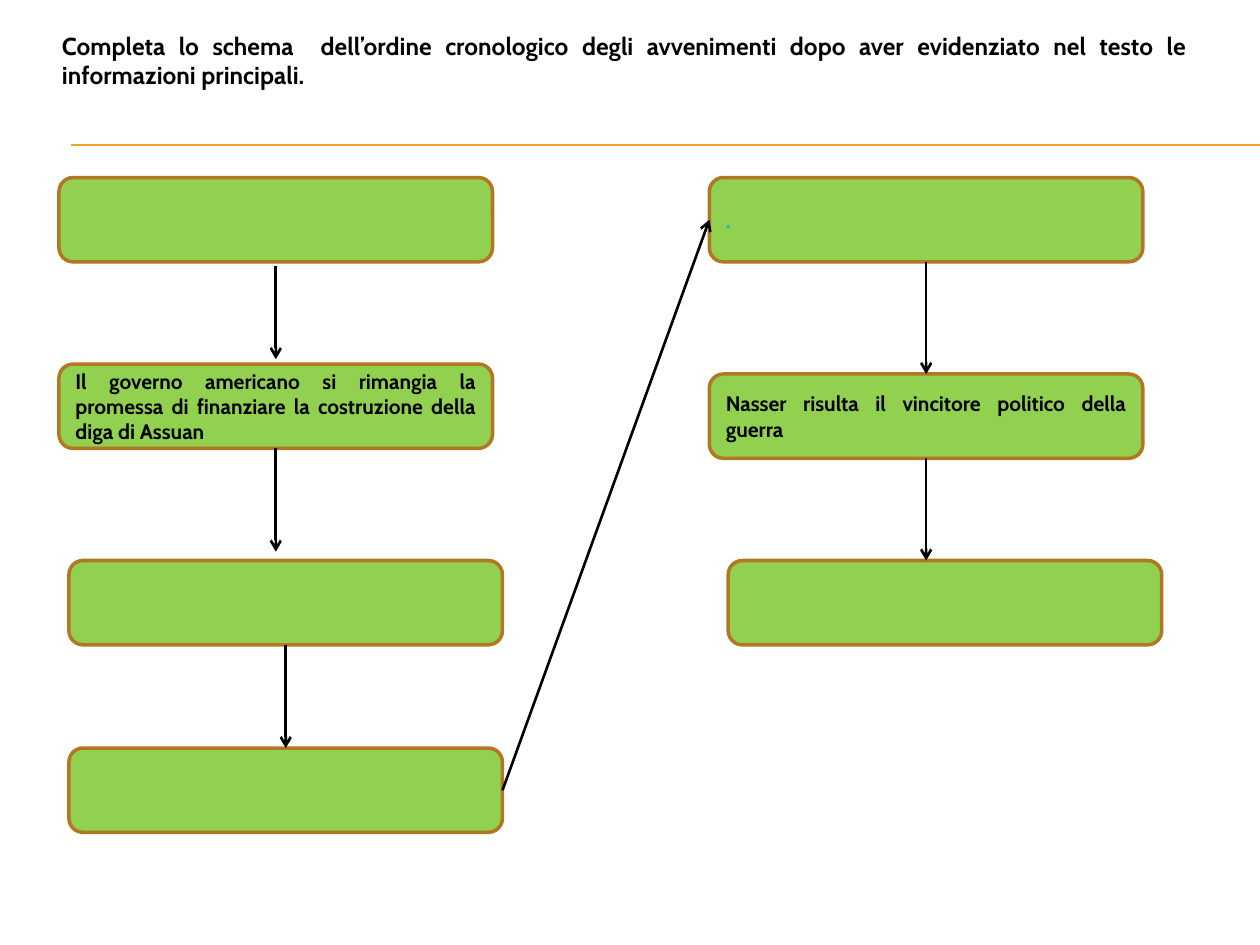
from dataclasses import dataclass
from itertools import pairwise

from lxml import etree
from pptx import Presentation
from pptx.dml.color import RGBColor
from pptx.enum.shapes import MSO_CONNECTOR, MSO_SHAPE
from pptx.enum.text import MSO_ANCHOR, PP_ALIGN
from pptx.oxml.ns import qn
from pptx.util import Cm, Pt

STRAIGHT = MSO_CONNECTOR.STRAIGHT
ROUNDED = MSO_SHAPE.ROUNDED_RECTANGLE
JUSTIFY = PP_ALIGN.JUSTIFY
MIDDLE, TOP = MSO_ANCHOR.MIDDLE, MSO_ANCHOR.TOP


@dataclass(frozen=True)
class Theme:
    font: str = "Cabin"
    title_size: float = 14
    body_size: float = 12
    ink: str = "000000"
    accent: str = "00B0F0"
    fill: str = "92D050"
    border: str = "B17722"
    rule: str = "F0A22E"


@dataclass(frozen=True)
class Step:
    left: float  # offset from the column's left edge, cm
    top: float   # offset from the column's top edge, cm
    text: str = ""
    color: str = Theme.ink
    gap_before: float = 0  # space between the arrowhead and this box
    gap_after: float = 0   # space between this box and the next arrow


THEME = Theme()
BOX_W, BOX_H = 8.74, 1.7


def write(sp, text, size, color, anchor):
    tf = sp.text_frame
    tf.word_wrap = True
    tf.vertical_anchor = anchor
    tf.text = text
    p = tf.paragraphs[0]
    p.alignment = JUSTIFY
    font = p.runs[0].font
    font.name, font.size, font.bold = THEME.font, Pt(size), True
    font.color.rgb = RGBColor.from_string(color)


def add_line(slide, start, end, color, width, arrow=False):
    cx = slide.shapes.add_connector(STRAIGHT, *map(Cm, (*start, *end)))
    cx.line.color.rgb = RGBColor.from_string(color)
    cx.line.width = Pt(width)
    if arrow:
        etree.SubElement(cx.line._get_or_add_ln(), qn("a:tailEnd"), type="arrow")
    etree.SubElement(cx._element.spPr, qn("a:effectLst"))


def add_arrow(slide, start, end):
    add_line(slide, start, end, THEME.ink, 1.5, arrow=True)


def add_box(slide, left, top, step):
    sp = slide.shapes.add_shape(ROUNDED, Cm(left), Cm(top), Cm(BOX_W), Cm(BOX_H))
    sp.shadow.inherit = False
    sp.fill.solid()
    sp.fill.fore_color.rgb = RGBColor.from_string(THEME.fill)
    sp.line.color.rgb = RGBColor.from_string(THEME.border)
    sp.line.width = Pt(2)
    if step.text:
        write(sp, step.text, THEME.body_size, step.color, MIDDLE)


def add_header(slide, left, top, width, height):
    # Instruction
    sp = slide.shapes.add_textbox(Cm(left), Cm(top), Cm(width), Cm(height))
    write(sp, "Completa lo schema  dell’ordine cronologico degli avvenimenti "
              "dopo aver evidenziato nel testo le informazioni principali.",
          THEME.title_size, THEME.ink, TOP)
    # Double rule running to the slide's right edge
    for y in (top + 2.41, top + 2.44):
        add_line(slide, (left + 0.43, y), (25.4, y), THEME.rule, 0.75)


def add_column(slide, left, top, steps):
    for step in steps:
        add_box(slide, left + step.left, top + step.top, step)
    # Arrows drop from the middle of each box to the next one
    for step, following in pairwise(steps):
        x = left + step.left + BOX_W / 2
        add_arrow(slide, (x, top + step.top + BOX_H + step.gap_after),
                  (x, top + following.top - following.gap_before))


def main():
    prs = Presentation()
    prs.slide_width, prs.slide_height = Cm(25.4), Cm(19.05)
    slide = prs.slides.add_slide(prs.slide_layouts[6])

    add_header(slide, 1, 0.5, 23.18, 1.5)

    first = [
        Step(0, 0, gap_after=0.08),
        Step(0, 3.76, "Il governo americano si rimangia la promessa di "
                      "finanziare la costruzione della diga di Assuan",
             gap_before=0.1),
        Step(0.2, 7.72, gap_before=0.18),
        Step(0.2, 11.5),
    ]
    second = [
        Step(0, 0, ".", THEME.accent),
        Step(0, 3.96, "Nasser risulta il vincitore politico della guerra"),
        Step(0.38, 7.72),
    ]
    top, left_1, left_2 = 3.58, 1.19, 14.3
    add_column(slide, left_1, top, first)
    add_column(slide, left_2, top, second)

    # Link from the end of the first column to the start of the second
    last = first[-1]
    add_arrow(slide, (left_1 + last.left + BOX_W, top + last.top + BOX_H / 2),
              (left_2, top + BOX_H / 2))

    prs.save("out.pptx")


if __name__ == "__main__":
    main()
